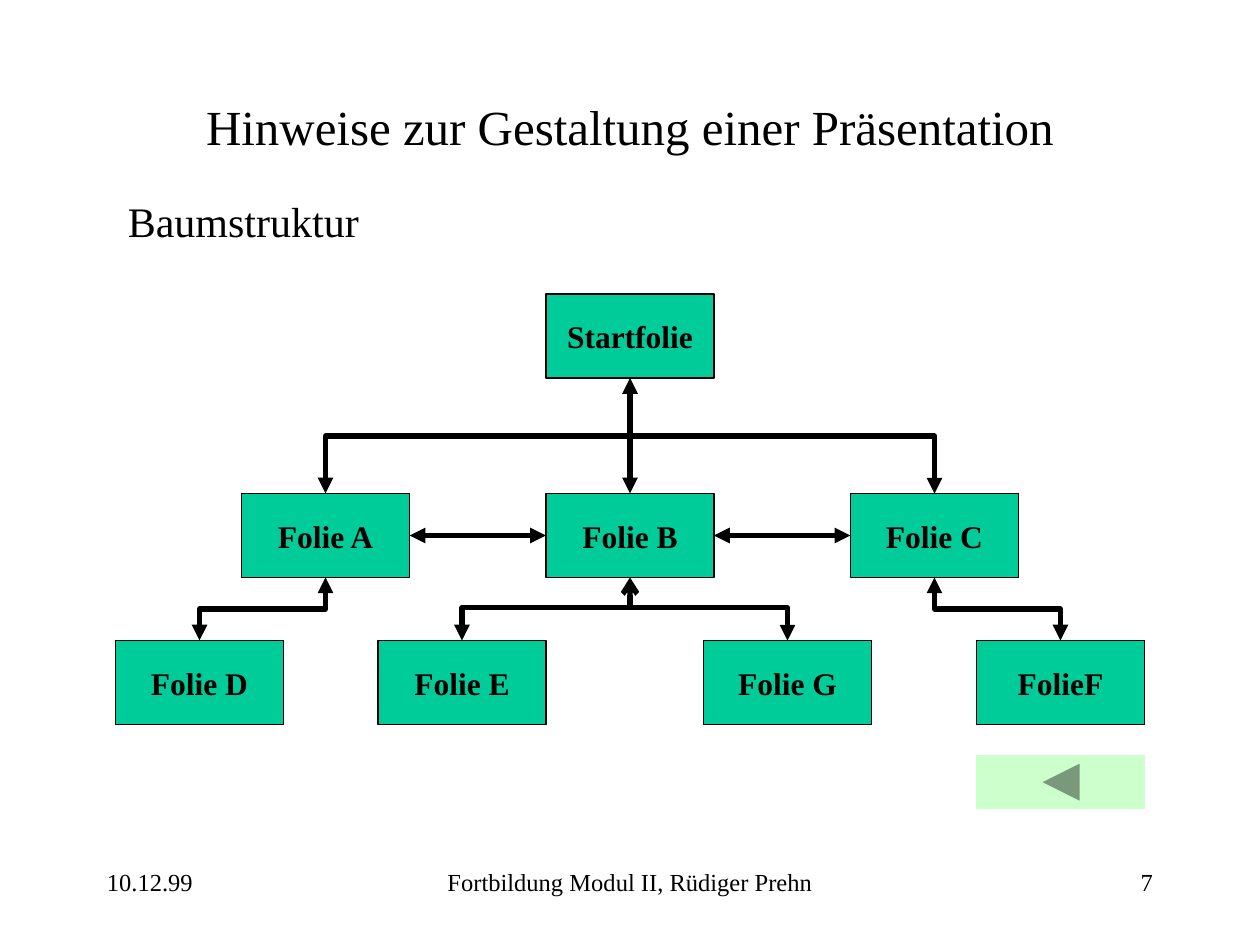
from lxml.etree import SubElement
from pptx import Presentation
from pptx.dml.color import RGBColor
from pptx.enum.shapes import MSO_CONNECTOR, MSO_SHAPE
from pptx.enum.text import MSO_ANCHOR, MSO_AUTO_SIZE, PP_ALIGN
from pptx.oxml.ns import qn
from pptx.util import Pt

BLACK = RGBColor(0x00, 0x00, 0x00)
GREEN = RGBColor(0x00, 0xCC, 0x99)
PALE_GREEN = RGBColor(0xCC, 0xFF, 0xCC)
FONT = "Times New Roman"

BOX_WIDTH, BOX_HEIGHT = 96, 48
START_ROW, MIDDLE_ROW, BOTTOM_ROW = 168, 282, 366
TOP, LEFT, BOTTOM, RIGHT = range(4)  # connection sites of a rectangle


def write_text(shape, text, size, align=PP_ALIGN.LEFT, anchor=MSO_ANCHOR.TOP,
               bold=False, wrap=True):
    frame = shape.text_frame
    frame.word_wrap = wrap
    frame.auto_size = MSO_AUTO_SIZE.NONE
    frame.vertical_anchor = anchor
    paragraph = frame.paragraphs[0]
    paragraph.alignment = align
    run = paragraph.add_run()
    run.text = text
    run.font.name = FONT
    run.font.size = Pt(size)
    run.font.bold = bold
    run.font.color.rgb = BLACK


def format_connector(connector, head="triangle", tail="triangle"):
    """Give a connector a thick black line, arrowheads and no shadow."""
    connector.line.color.rgb = BLACK
    connector.line.width = Pt(3)
    line = connector.line._get_or_add_ln()
    SubElement(line, qn("a:headEnd"), type=head)
    SubElement(line, qn("a:tailEnd"), type=tail)
    SubElement(connector._element.spPr, qn("a:effectLst"))


presentation = Presentation()
presentation.slide_width = Pt(720)
presentation.slide_height = Pt(540)
slide = presentation.slides.add_slide(presentation.slide_layouts[5])
shapes = slide.shapes

title = shapes.title
title.left, title.top, title.width, title.height = Pt(54), Pt(48), Pt(612), Pt(48)
write_text(title, "Hinweise zur Gestaltung einer Präsentation", 28,
           align=PP_ALIGN.CENTER, anchor=MSO_ANCHOR.MIDDLE)

# Subtitle and footer
for text, left, top, width, size, align in [
    ("Baumstruktur", 66, 108, 588, 24, PP_ALIGN.LEFT),
    ("10.12.99", 54, 492, 150, 14, PP_ALIGN.LEFT),
    ("Fortbildung Modul II, Rüdiger Prehn", 246, 492, 228, 14, PP_ALIGN.CENTER),
    ("7", 516, 492, 150, 14, PP_ALIGN.RIGHT),
]:
    text_box = shapes.add_textbox(Pt(left), Pt(top), Pt(width), Pt(36))
    write_text(text_box, text, size, align=align)

# Boxes of the tree
boxes = {}
for name, left, top in [
    ("Startfolie", 312, START_ROW),
    ("Folie A", 138, MIDDLE_ROW),
    ("Folie B", 312, MIDDLE_ROW),
    ("Folie C", 486, MIDDLE_ROW),
    ("Folie D", 66, BOTTOM_ROW),
    ("Folie E", 216, BOTTOM_ROW),
    ("Folie G", 402, BOTTOM_ROW),
    ("FolieF", 558, BOTTOM_ROW),
]:
    box = shapes.add_shape(MSO_SHAPE.RECTANGLE, Pt(left), Pt(top),
                           Pt(BOX_WIDTH), Pt(BOX_HEIGHT))
    box.shadow.inherit = False
    box.fill.solid()
    box.fill.fore_color.rgb = GREEN
    box.line.color.rgb = BLACK
    box.line.width = Pt(0.75)
    write_text(box, name, 18, align=PP_ALIGN.CENTER, anchor=MSO_ANCHOR.MIDDLE,
               bold=True, wrap=False)
    boxes[name] = box

# Straight links between neighbouring boxes
for first, first_site, second, second_site in [
    ("Folie A", RIGHT, "Folie B", LEFT),
    ("Folie B", RIGHT, "Folie C", LEFT),
    ("Folie B", TOP, "Startfolie", BOTTOM),
]:
    link = shapes.add_connector(MSO_CONNECTOR.STRAIGHT, 0, 0, 0, 0)
    link.begin_connect(boxes[first], first_site)
    link.end_connect(boxes[second], second_site)
    format_connector(link)

# Stub from the lower bus up to Folie B
stub = shapes.add_connector(MSO_CONNECTOR.STRAIGHT, Pt(360), Pt(348), Pt(360), Pt(330))
format_connector(stub, head="none", tail="arrow")

# Elbows leave and arrive vertically and cross over at bus_y. The frame is
# turned by 90 degrees, so its width is the drop and its height the span.
# Links between level boxes need a tiny drop to scale the adjustment.
middle_bottom = MIDDLE_ROW + BOX_HEIGHT
for x1, y1, x2, drop, bus_y in [
    (264, BOTTOM_ROW, 450, 0.1, 349),
    (186, MIDDLE_ROW, 534, 0.1, 253),
    (534, middle_bottom, 606, 36, 348),
    (186, middle_bottom, 114, 36, 348),
]:
    if drop < 1:
        bus_y = {BOTTOM_ROW: 349.5, MIDDLE_ROW: 253}[y1]
    center_x, center_y = (x1 + x2) / 2, y1 + drop / 2
    span = x2 - x1
    elbow = shapes.add_connector(
        MSO_CONNECTOR.ELBOW,
        Pt(center_x - drop / 2), Pt(center_y + span / 2),
        Pt(center_x + drop / 2), Pt(center_y - span / 2))
    properties = elbow._element.spPr
    properties.find(qn("a:xfrm")).set("rot", str(90 * 60000))
    adjustments = properties.find(qn("a:prstGeom")).get_or_add_avLst()
    ratio = round((bus_y - y1) / drop * 100000)
    SubElement(adjustments, qn("a:gd"), name="adj1", fmla=f"val {ratio}")
    format_connector(elbow)

back_button = shapes.add_shape(MSO_SHAPE.ACTION_BUTTON_BACK_OR_PREVIOUS,
                               Pt(558), Pt(432), Pt(BOX_WIDTH), Pt(30))
back_button.shadow.inherit = False
back_button.fill.solid()
back_button.fill.fore_color.rgb = PALE_GREEN
back_button.line.color.rgb = PALE_GREEN
back_button.line.width = Pt(0.75)

presentation.save("out.pptx")
